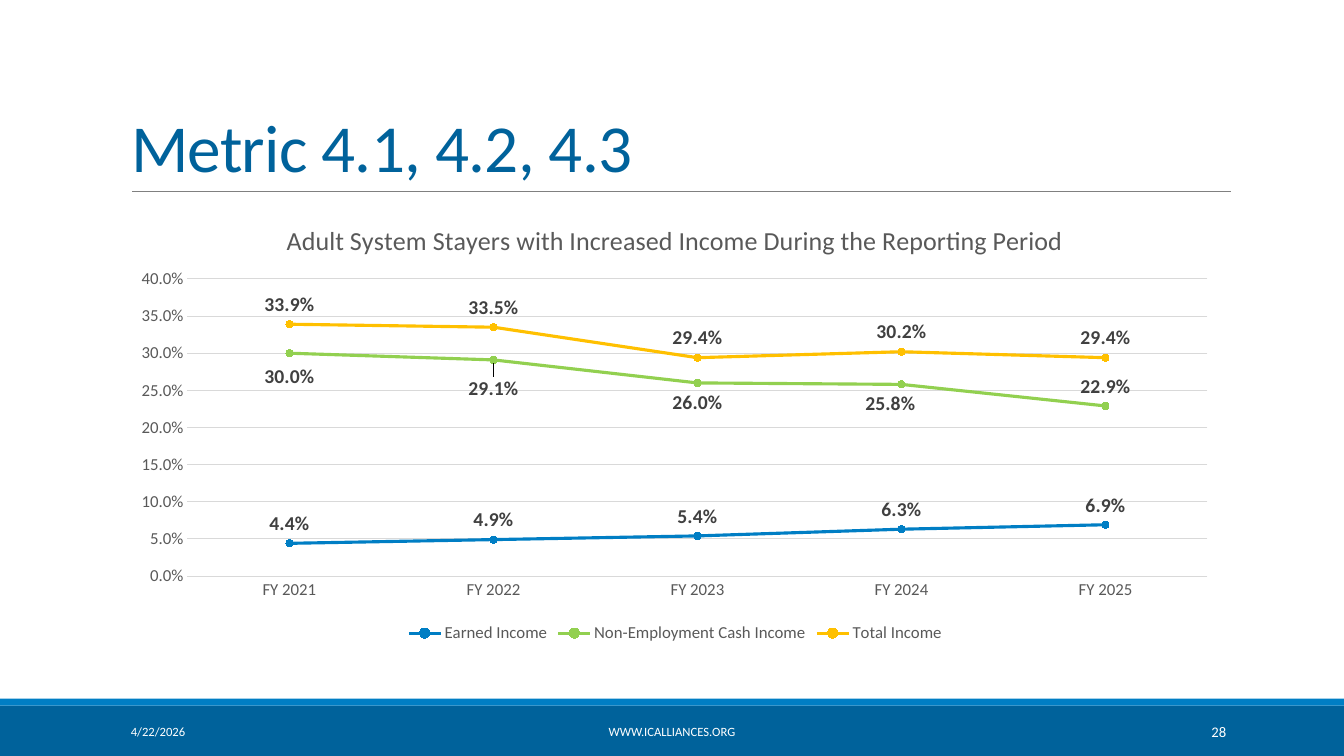
from dataclasses import dataclass

from lxml.etree import SubElement
from pptx import Presentation
from pptx.chart.data import CategoryChartData
from pptx.dml.color import RGBColor
from pptx.enum.chart import (XL_CHART_TYPE as ChartType, XL_LABEL_POSITION as LabelPosition,
                             XL_LEGEND_POSITION as LegendPosition, XL_MARKER_STYLE as Marker,
                             XL_TICK_MARK as TickMark)
from pptx.enum.shapes import MSO_CONNECTOR as Connector, MSO_SHAPE as Shape
from pptx.enum.text import MSO_ANCHOR as Anchor, MSO_AUTO_SIZE as AutoSize, PP_ALIGN as Align
from pptx.oxml import parse_xml
from pptx.oxml.ns import nsdecls, qn
from pptx.util import Inches, Pt


@dataclass(frozen=True)
class Theme:
    font: str = "Calibri"
    navy: str = "00629B"
    blue: str = "007EC4"
    green: str = "92D050"
    gold: str = "FFC000"
    white: str = "FFFFFF"
    rule: str = "808080"
    grid: str = "D9D9D9"
    axis_text: str = "595959"
    label_text: str = "404040"
    title_size: float = 48
    chart_title_size: float = 18.6
    label_size: float = 14
    axis_size: float = 12
    footer_size: float = 9
    page_size: float = 10.5


PERCENT = "0.0%"
YEARS = [f"FY {year}" for year in range(2021, 2026)]
INCOME = {
    "Earned Income": ("blue", (0.044, 0.049, 0.054, 0.063, 0.069)),
    "Non-Employment Cash Income": ("green", (0.3, 0.291, 0.26, 0.258, 0.229)),
    "Total Income": ("gold", (0.339, 0.335, 0.294, 0.302, 0.294)),
}
# Labels set below their points: point index -> shift as a share of the chart
LABELS_BELOW = {"Non-Employment Cash Income": {0: (0, 0.01), 1: (0, 0.02), 2: (0, 0), 3: (-0.01, 0)}}


def add_layout(parent, index, **settings):
    """Insert a c:layout with manual settings, in schema order, at a child index."""
    layout = parse_xml(f'<c:layout {nsdecls("c")}><c:manualLayout/></c:layout>')
    for tag, value in settings.items():
        SubElement(layout[0], qn(f"c:{tag}")).set("val", str(value))
    parent.insert(index, layout)


class MetricSlide:
    """Places elements on a grid of 100 columns by 100 rows."""

    def __init__(self, deck, theme):
        self.deck, self.theme = deck, theme
        self.slide = deck.slides.add_slide(deck.slide_layouts[5])
        self.shapes = self.slide.shapes

    def place(self, left, top, width, height):
        column, row = self.deck.slide_width / 100, self.deck.slide_height / 100
        return [round(n) for n in (left * column, top * row, width * column, height * row)]

    def style(self, font, size, color, bold=False):
        font.name, font.size, font.bold = self.theme.font, Pt(size), bold
        font.color.rgb = RGBColor.from_string(color)

    def stroke(self, line, color, width):
        line.color.rgb = RGBColor.from_string(color)
        line.width = Pt(width)

    def band(self, top, height, color):
        band = self.shapes.add_shape(Shape.RECTANGLE, *self.place(0, top, 100, height))
        band.shadow.inherit = False
        band.fill.solid()
        band.fill.fore_color.rgb = RGBColor.from_string(color)
        band.line.fill.background()

    def rule(self, left, right, row):
        x, y, width, _ = self.place(left, row, right - left, 0)
        rule = self.shapes.add_connector(Connector.STRAIGHT, x, y, x + width, y)
        self.stroke(rule.line, self.theme.rule, 0.5)
        SubElement(rule._element.spPr, qn("a:effectLst"))

    def title(self, wording, *cell):
        title = self.shapes.title
        title.left, title.top, title.width, title.height = self.place(*cell)
        frame = title.text_frame
        frame.auto_size, frame.word_wrap = AutoSize.NONE, True
        frame.vertical_anchor = Anchor.BOTTOM
        heading = frame.paragraphs[0]
        heading.alignment, heading.line_spacing = Align.LEFT, 0.85
        run = heading.add_run()
        run.text = wording
        self.style(run.font, self.theme.title_size, self.theme.navy)
        run._r.get_or_add_rPr().set("spc", "-50")

    def footer(self, wording, left, width, align, size):
        frame = self.shapes.add_textbox(*self.place(left, 94.13, width, 5.33)).text_frame
        frame.word_wrap, frame.vertical_anchor = True, Anchor.MIDDLE
        frame.paragraphs[0].alignment = align
        run = frame.paragraphs[0].add_run()
        run.text = wording
        self.style(run.font, size, self.theme.white)

    def line_chart(self, heading, categories, data, *cell):
        theme = self.theme
        chart_data = CategoryChartData(number_format=PERCENT)
        chart_data.categories = categories
        for name, (_, values) in data.items():
            chart_data.add_series(name, values)
        chart = self.shapes.add_chart(ChartType.LINE_MARKERS, *self.place(*cell), chart_data).chart
        self.style(chart.font, theme.axis_size, theme.axis_text)

        chart.has_title = True
        run = chart.chart_title.text_frame.paragraphs[0].add_run()
        run.text = heading
        self.style(run.font, theme.chart_title_size, theme.axis_text)

        chart.has_legend = True
        chart.legend.position = LegendPosition.BOTTOM
        chart.legend.include_in_layout = False
        self.style(chart.legend.font, theme.axis_size, theme.axis_text)

        self.axes(chart)
        chart.plots[0].vary_by_categories = False
        for series in chart.plots[0].series:
            self.income_line(series, getattr(theme, data[series.name][0]))

        plot_area = chart._chartSpace.chart.plotArea
        for old in plot_area.findall(qn("c:layout")):
            plot_area.remove(old)
        add_layout(plot_area, 0, layoutTarget="inner", xMode="edge", yMode="edge",
                   x=0.06, y=0.17, w=0.92, h=0.67)

    def axes(self, chart):
        for axis in (chart.category_axis, chart.value_axis):
            axis.major_tick_mark = axis.minor_tick_mark = TickMark.NONE
            self.style(axis.tick_labels.font, self.theme.axis_size, self.theme.axis_text)
        self.stroke(chart.category_axis.format.line, self.theme.grid, 0.75)
        values = chart.value_axis
        values.minimum_scale, values.maximum_scale, values.major_unit = 0, 0.4, 0.05
        values.tick_labels.number_format = PERCENT
        values.tick_labels.number_format_is_linked = False
        values.format.line.fill.background()
        values.has_major_gridlines = True
        self.stroke(values.major_gridlines.format.line, self.theme.grid, 0.75)

    def income_line(self, series, color):
        theme = self.theme
        series.smooth = False
        self.stroke(series.format.line, color, 2.25)
        series.marker.style, series.marker.size = Marker.CIRCLE, 5
        series.marker.format.fill.solid()
        series.marker.format.fill.fore_color.rgb = RGBColor.from_string(color)
        self.stroke(series.marker.format.line, color, 0.75)

        labels = series.data_labels
        labels.show_value, labels.position = True, LabelPosition.ABOVE
        labels.number_format, labels.number_format_is_linked = PERCENT, False
        self.style(labels.font, theme.label_size, theme.label_text, bold=True)
        for index, (dx, dy) in LABELS_BELOW.get(series.name, {}).items():
            label = series.points[index].data_label
            self.style(label.font, theme.label_size, theme.label_text, bold=True)
            label.position = LabelPosition.BELOW
            if dx or dy:
                add_layout(labels._element.findall(qn("c:dLbl"))[index], 1, x=dx, y=dy)


def main():
    deck = Presentation()
    deck.slide_width, deck.slide_height = Inches(13.33), Inches(7.5)
    theme = Theme()
    metric = MetricSlide(deck, theme)
    metric.band(93.33, 6.67, theme.navy)
    metric.band(92.4, 0.93, theme.blue)
    metric.rule(9.83, 91.6, 25.33)
    metric.title("Metric 4.1, 4.2, 4.3", 9, 4.13, 82.5, 21.2)
    metric.line_chart("Adult System Stayers with Increased Income During the Reporting Period",
                      YEARS, INCOME, 9, 26.93, 82.5, 58.67)
    metric.footer("4/22/2026", 9, 20.25, Align.LEFT, theme.footer_size)
    metric.footer("WWW.ICALLIANCES.ORG", 30.23, 39.53, Align.CENTER, theme.footer_size)
    metric.footer("28", 81.24, 10.73, Align.RIGHT, theme.page_size)
    deck.save("out.pptx")


if __name__ == "__main__":
    main()
